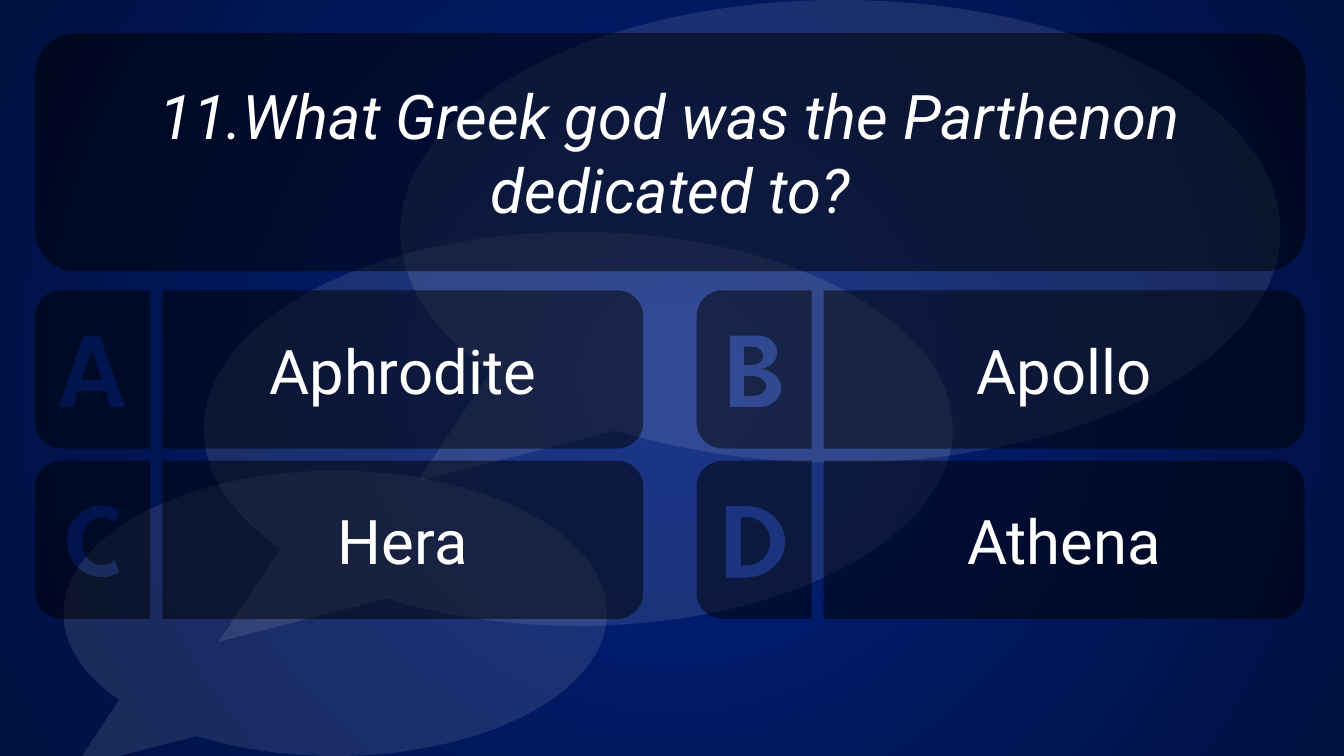
"""Build a quiz slide with one question and four answers."""
from math import cos, radians, sin

from lxml import etree
from pptx import Presentation
from pptx.dml.color import RGBColor
from pptx.enum.shapes import MSO_SHAPE
from pptx.enum.text import MSO_ANCHOR, PP_ALIGN
from pptx.oxml.ns import qn
from pptx.util import Inches, Pt

BUBBLE = MSO_SHAPE.OVAL_CALLOUT
ROUND = MSO_SHAPE.ROUNDED_RECTANGLE
MIDDLE = MSO_ANCHOR.MIDDLE
CENTER = PP_ALIGN.CENTER

COLORS = {"glow": "00217F", "edge": "001040", "panel": "000000",
          "bubble": "FFFFFF", "text": "FFFFFF"}
FONT = {"name": "Roboto", "size": Pt(44)}

LEFT, TOP = 0.35, 2.88
COL, ROW = 6.56, 1.69
TAB, GAP, BODY, HIGH = 1.14, 0.12, 4.77, 1.57
CURVE = 0.26
HEAD, FOOT = 0.45, 1.16

BUBBLES = [(0.63, 4.67, 5.39, 2.83), (2.02, 2.3, 7.43, 3.91),
           (3.97, 0, 8.73, 4.59)]
QUESTION = "11.What Greek god was the Parthenon dedicated to?"
ANSWERS = ["Aphrodite", "Apollo", "Hera", "Athena"]


def arc(x, y, wide, high, start, end, steps=12):
    """List points along part of an ellipse."""
    turns = [radians(start + (end - start) * i / steps)
             for i in range(steps + 1)]
    return [(x + wide * cos(turn), y + high * sin(turn)) for turn in turns]


def bowl(left, top, *lobes):
    """List the points of a straight stem with round lobes on its right."""
    points = [(left, top)]
    for low, mid, right in lobes:
        half = (low - top) / 2
        points += arc(mid, top + half, right - mid, half, -90, 90)
        top = low
    return points + [(left, top)]


def draw_a():
    """Return the rings of the letter A."""
    mid, bar = 0.56, 1
    half = [(0.08, HEAD), (0.33, FOOT), (0.18, FOOT), (0.14, bar)]
    left = [(mid - x, y) for x, y in half]
    right = [(mid + x, y) for x, y in reversed(half)]
    return [[(mid, 0.59), (mid + 0.1, 0.89), (mid - 0.1, 0.89)], left + right]


def draw_b():
    """Return the rings of the letter B."""
    return [bowl(0.47, 0.56, (0.74, 0.55, 0.66)),
            bowl(0.47, 0.85, (1.05, 0.55, 0.69)),
            bowl(0.33, HEAD, (0.78, 0.62, 0.8), (FOOT, 0.62, 0.84))]


def draw_c():
    """Return the ring of the letter C."""
    x, y = 0.66, 0.8
    return [arc(x, y, 0.35, 0.36, 60, 300) + arc(x, y, 0.2, 0.24, 310, 50)]


def draw_d():
    """Return the rings of the letter D."""
    return [bowl(0.44, 0.56, (1.04, 0.5, 0.73)),
            bowl(0.29, HEAD, (FOOT, 0.5, 0.88))]


def outline(wide):
    """List the points of a panel with two round corners on its right."""
    x = wide - CURVE
    return [(0, HIGH), (0, 0), *arc(x, CURVE, CURVE, CURVE, -90, 0),
            *arc(x, HIGH - CURVE, CURVE, CURVE, 0, 90)]


def paint(shape, color, alpha):
    """Give a shape a see-through fill, no line and no shadow."""
    shape.shadow.inherit = False
    shape.line.fill.background()
    shape.fill.solid()
    shape.fill.fore_color.rgb = RGBColor.from_string(COLORS[color])
    tint = shape.element.spPr.find(qn("a:solidFill"))[0]
    etree.SubElement(tint, qn("a:alpha"), val=str(alpha * 1000))


def write(shape, text, **extra):
    """Put centred text in a shape."""
    frame = shape.text_frame
    frame.word_wrap = True
    frame.vertical_anchor = MIDDLE
    para = frame.paragraphs[0]
    para.alignment = CENTER
    run = para.add_run()
    run.text = text
    for key, value in {**FONT, **extra}.items():
        setattr(run.font, key, value)
    run.font.color.rgb = RGBColor.from_string(COLORS["text"])


def fill_back(slide):
    """Fill the slide with a round glow."""
    fill = slide.background.fill
    fill.gradient()
    for place, name in enumerate(("glow", "edge")):
        stop = fill.gradient_stops[place]
        stop.color.rgb = RGBColor.from_string(COLORS[name])
        stop.position = place
    line = slide.element.find(".//" + qn("a:lin"))
    ring = etree.Element(qn("a:path"), path="circle")
    etree.SubElement(ring, qn("a:fillToRect"), dict.fromkeys("ltrb", "50000"))
    line.getparent().replace(line, ring)


def add_bubbles(slide):
    """Add the group of speech bubbles."""
    group = slide.shapes.add_group_shape()
    for box in BUBBLES:
        shape = group.shapes.add_shape(BUBBLE, *map(Inches, box))
        for index, value in enumerate((-0.48, 0.54)):
            shape.adjustments[index] = value
        paint(shape, "bubble", 10)


def add_panel(slide, left, top, rings):
    """Add a dark panel from closed rings of points."""
    rings = [[(Inches(left + x), Inches(top + y)) for x, y in ring]
             for ring in rings]
    first, *rest = rings
    maker = slide.shapes.build_freeform(*first[0])
    maker.add_line_segments(first[1:], close=True)
    for ring in rest:
        maker.move_to(*ring[0])
        maker.add_line_segments(ring[1:], close=True)
    shape = maker.convert_to_shape()
    paint(shape, "panel", 50)
    return shape


def add_answer(slide, index, draw, text):
    """Add a letter tab and its answer panel."""
    row, col = divmod(index, 2)
    left, top = LEFT + col * COL, TOP + row * ROW
    body = add_panel(slide, left + TAB + GAP, top, [outline(BODY)])
    write(body, text)
    edge = [(TAB - x, y) for x, y in outline(TAB)]
    add_panel(slide, left, top, [edge, *draw()])


def add_question(slide):
    """Add the question box."""
    box = (LEFT, 0.33, 12.6, 2.36)
    shape = slide.shapes.add_shape(ROUND, *map(Inches, box))
    paint(shape, "panel", 50)
    write(shape, QUESTION, italic=True)


def main():
    """Build and save the slide."""
    deck = Presentation()
    deck.slide_width, deck.slide_height = Inches(13.33), Inches(7.5)
    slide = deck.slides.add_slide(deck.slide_layouts[6])
    fill_back(slide)
    add_bubbles(slide)
    letters = (draw_a, draw_b, draw_c, draw_d)
    for index, (draw, text) in enumerate(zip(letters, ANSWERS)):
        add_answer(slide, index, draw, text)
    add_question(slide)
    deck.save("out.pptx")


if __name__ == "__main__":
    main()
